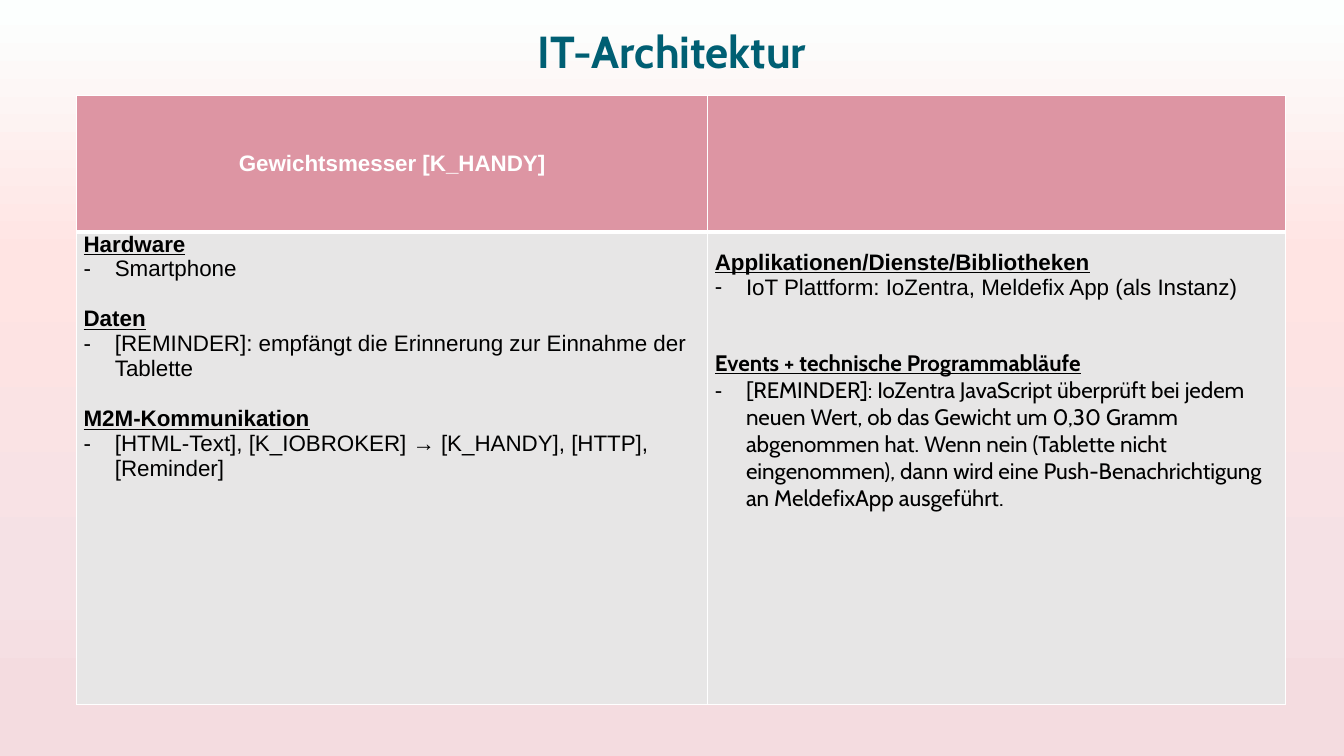
from dataclasses import dataclass

from pptx import Presentation
from pptx.dml.color import RGBColor
from pptx.enum.text import MSO_ANCHOR as Anchor, MSO_AUTO_SIZE as AutoSize, PP_ALIGN as Align
from pptx.oxml import parse_xml
from pptx.oxml.ns import nsdecls, qn
from pptx.util import Inches, Pt


@dataclass(frozen=True)
class Theme:
    """Colours, fonts and type sizes of the slide."""
    title: str = "005F73"
    header: str = "DD95A3"
    body: str = "E7E6E6"
    white: str = "FFFFFF"
    black: str = "000000"
    gradient: tuple = ((8, "F4DCE0"), (23, "F5E1E5"), (66, "FFE4E3"), (99, "FCFFFE"))
    sans: str = "Arial"
    display: str = "Cabin"
    title_size: int = 32
    text_size: int = 16


THEME = Theme()

LEFT_SECTIONS = [
    ("Hardware", "Smartphone", THEME.sans, 0),
    ("Daten", "[REMINDER]: empfängt die Erinnerung zur Einnahme der Tablette", THEME.sans, 18),
    ("M2M-Kommunikation", "[HTML-Text], [K_IOBROKER] → [K_HANDY], [HTTP], [Reminder]", THEME.sans, 18),
]
RIGHT_SECTIONS = [
    ("Applikationen/Dienste/Bibliotheken",
     "IoT Plattform: IoZentra, Meldefix App (als Instanz)", THEME.sans, 0),
    ("Events + technische Programmabläufe",
     "[REMINDER]: IoZentra JavaScript überprüft bei jedem neuen Wert, ob das Gewicht um "
     "0,30 Gramm abgenommen hat. Wenn nein (Tablette nicht eingenommen), dann wird eine "
     "Push-Benachrichtigung an MeldefixApp ausgeführt.", THEME.display, 36),
]


def style_runs(p, font, size, color, bold=False, underline=False):
    """Format every run of a paragraph."""
    for r in p.runs:
        r.font.name = font
        r.font.size = Pt(size)
        r.font.bold = bold
        r.font.underline = underline
        r.font.color.rgb = RGBColor.from_string(color)


def set_background(s):
    """Fill the slide with the vertical gradient."""
    fill = s.background.fill
    fill.gradient()
    fill.gradient_angle = 90
    stops = s.element.find(".//" + qn("a:gsLst"))
    for stop in list(stops):
        stops.remove(stop)
    for percent, color in THEME.gradient:
        stops.append(parse_xml(
            f'<a:gs {nsdecls("a")} pos="{percent * 1000}"><a:srgbClr val="{color}"/></a:gs>'))


def set_title(s, text):
    """Place and format the title placeholder."""
    title = s.shapes.title
    title.left, title.top = Inches(2.11), Inches(0.1)
    title.width, title.height = Inches(9.11), Inches(0.72)
    tf = title.text_frame
    tf.text = text
    tf.auto_size = AutoSize.NONE
    tf.vertical_anchor = Anchor.BOTTOM
    p = tf.paragraphs[0]
    p.alignment = Align.CENTER
    style_runs(p, THEME.display, THEME.title_size, THEME.title, bold=True)


def style_cell(cell, color, top, bottom, anchor):
    """Set borders, fill, margins and anchor of a cell."""
    tc_pr = cell._tc.get_or_add_tcPr()
    for side, width in (("L", 1), ("R", 1), ("T", top), ("B", bottom)):
        tc_pr.append(parse_xml(
            f'<a:ln{side} {nsdecls("a")} w="{Pt(width)}"><a:solidFill>'
            f'<a:srgbClr val="{THEME.white}"/></a:solidFill></a:ln{side}>'))
    cell.fill.solid()
    cell.fill.fore_color.rgb = RGBColor.from_string(color)
    cell.margin_left = cell.margin_right = Inches(0.07)
    cell.margin_top = cell.margin_bottom = 0
    cell.vertical_anchor = anchor


def make_dash_item(p):
    """Give a paragraph a hanging dash bullet."""
    p_pr = p._p.get_or_add_pPr()
    p_pr.set("marL", str(Inches(0.31)))
    p_pr.set("indent", str(-Inches(0.31)))
    p_pr.append(parse_xml(f'<a:buFont {nsdecls("a")} typeface="{THEME.sans}"/>'))
    p_pr.append(parse_xml(f'<a:buChar {nsdecls("a")} char="-"/>'))


def write_sections(cell, sections):
    """Write underlined headings, each followed by a dash item."""
    tf = cell.text_frame
    for i, (heading, item, font, gap) in enumerate(sections):
        p = tf.add_paragraph() if i else tf.paragraphs[0]
        p.text = heading
        if gap:
            p.space_before = Pt(gap)
        style_runs(p, font, THEME.text_size, THEME.black, bold=True, underline=True)
        p = tf.add_paragraph()
        p.text = item
        make_dash_item(p)
        style_runs(p, font, THEME.text_size, THEME.black)


def add_architecture_table(s):
    """Add the table with its header and two section columns."""
    frame = s.shapes.add_table(2, 2, Inches(0.76), Inches(0.95), Inches(11.99), Inches(6.04))
    table = frame.table
    for column, width in zip(table.columns, (6.26, 5.73)):
        column.width = Inches(width)
    for row, height in zip(table.rows, (1.35, 4.69)):
        row.height = Inches(height)
    for col, sections in enumerate((LEFT_SECTIONS, RIGHT_SECTIONS)):
        style_cell(table.cell(0, col), THEME.header, 1, 3, Anchor.MIDDLE)
        body = table.cell(1, col)
        style_cell(body, THEME.body, 3, 1, Anchor.TOP)
        write_sections(body, sections)
    table.cell(1, 1).margin_top = Inches(0.18)
    p = table.cell(0, 0).text_frame.paragraphs[0]
    p.text = "Gewichtsmesser [K_HANDY]"
    p.alignment = Align.CENTER
    style_runs(p, THEME.sans, THEME.text_size, THEME.white, bold=True)


def main():
    """Build the slide and save it."""
    prs = Presentation()
    prs.slide_width, prs.slide_height = Inches(13.33), Inches(7.5)
    s = prs.slides.add_slide(prs.slide_layouts[5])
    set_background(s)
    set_title(s, "IT-Architektur")
    add_architecture_table(s)
    prs.save("out.pptx")


if __name__ == "__main__":
    main()
